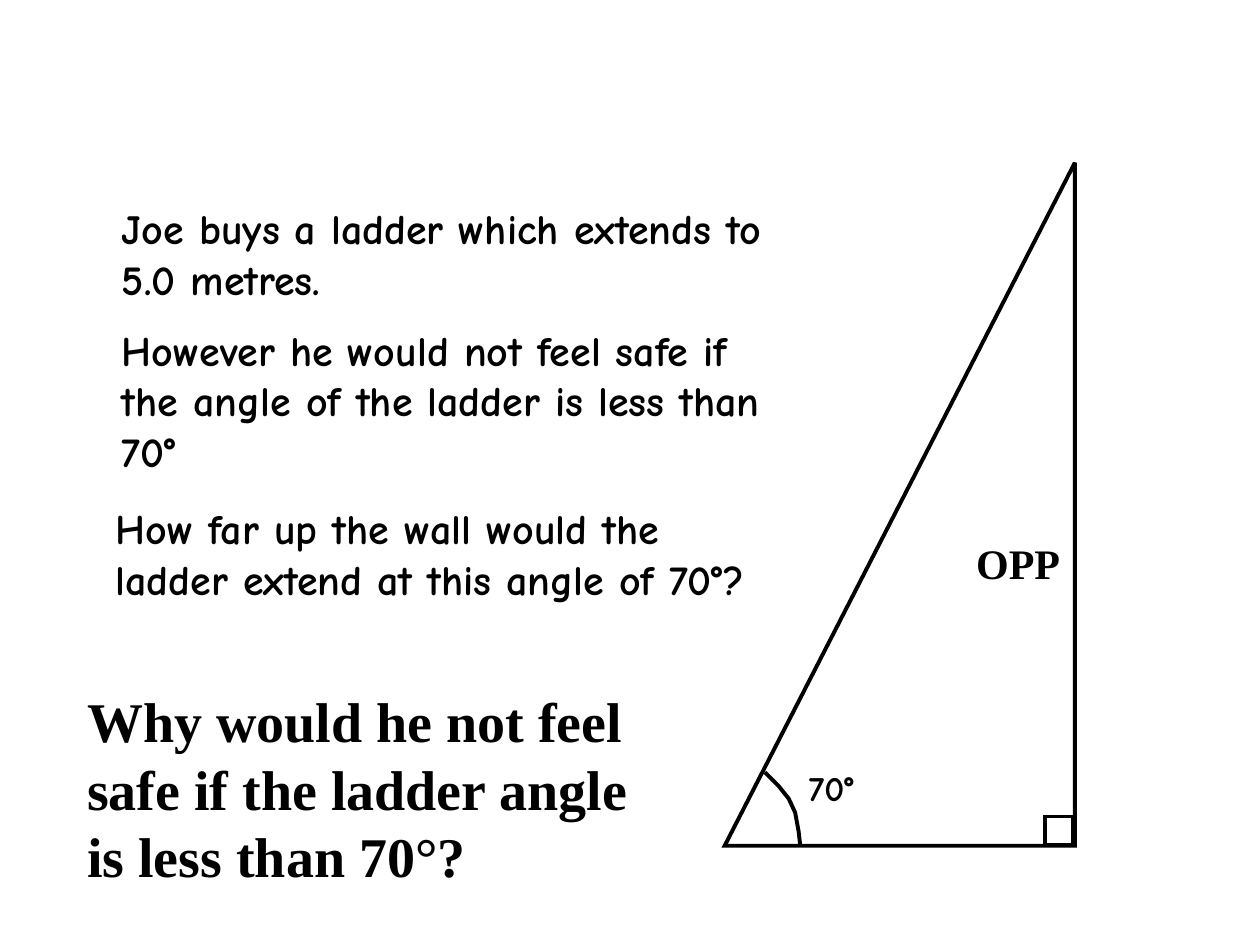
import dataclasses

import lxml.etree
import pptx
import pptx.dml.color
import pptx.enum.shapes
import pptx.enum.text
import pptx.oxml.ns
import pptx.util

Cm, Pt = pptx.util.Cm, pptx.util.Pt


@dataclasses.dataclass(frozen=True)
class Theme:
    ink: pptx.dml.color.RGBColor = pptx.dml.color.RGBColor(0, 0, 0)
    hand: str = "Comic Neue"
    serif: str = "Times New Roman"
    small: int = 20
    body: int = 24
    title: int = 32
    line: float = 2.25


THEME = Theme()


@dataclasses.dataclass(frozen=True)
class Box:
    left: float
    top: float
    width: float
    height: float

    def lengths(self) -> tuple:
        return tuple(Cm(v) for v in dataclasses.astuple(self))


@dataclasses.dataclass(frozen=True)
class Label:
    box: Box
    paragraphs: tuple
    font: str = THEME.hand
    size: int = THEME.body


QUESTION = Label(
    Box(1.5, 13.72, 12.19, 4.37),
    ("Why would he not feel safe if the ladder angle is less than 70°?",),
    THEME.serif,
    THEME.title,
)
LABELS = (
    Label(
        Box(2.21, 3.96, 14.07, 5.89),
        (
            "Joe buys a ladder which extends to 5.0 metres.",
            "However he would not feel safe if the angle of the ladder is less than 70°",
        ),
    ),
    Label(Box(19.43, 10.72, 2.26, 1.27), ("OPP",), THEME.serif),
    Label(Box(16.05, 15.32, 2.26, 1.09), ("70°",), size=THEME.small),
    Label(
        Box(2.08, 10.01, 13.74, 3.33),
        ("How far up the wall would the ladder extend at this angle of 70°?",),
    ),
)
TRIANGLE = Box(14.61, 3.28, 7.06, 13.77)
CORNER = Box(21.06, 16.46, 0.58, 0.58)
ARC = (
    (16.13, 17.02), (16.1, 16.76), (16.03, 16.38), (15.9, 16.1),
    (15.7, 15.85), (15.42, 15.57),
)


def write(tf, label: Label) -> None:
    """Fill a text frame with the paragraphs of a label."""
    frame = {
        "word_wrap": True,
        "auto_size": pptx.enum.text.MSO_AUTO_SIZE.NONE,
        "vertical_anchor": pptx.enum.text.MSO_ANCHOR.TOP,
    }
    for name, value in frame.items():
        setattr(tf, name, value)
    for i, text in enumerate(label.paragraphs):
        p = tf.add_paragraph() if i else tf.paragraphs[0]
        p.alignment = pptx.enum.text.PP_ALIGN.LEFT
        p.space_before = Pt(label.size / 2 if i else 0)
        r = p.add_run()
        r.text = text
        font = {"name": label.font, "size": Pt(label.size), "bold": True}
        for name, value in font.items():
            setattr(r.font, name, value)
        r.font.color.rgb = THEME.ink


def outline(sp) -> None:
    """Give a shape a plain outline without fill or shadow."""
    sp.shadow.inherit = False
    sp.fill.background()
    sp.line.color.rgb = THEME.ink
    sp.line.width = Pt(THEME.line)
    lxml.etree.SubElement(sp.line._get_or_add_ln(), pptx.oxml.ns.qn("a:miter"), lim="800000")


def add_outline(s, kind, box: Box):
    """Draw an outlined preset shape."""
    sp = s.shapes.add_shape(kind, *box.lengths())
    outline(sp)
    return sp


def add_arc(s, points: tuple) -> None:
    """Draw the angle mark through the given points."""
    start, *rest = [(Cm(x), Cm(y)) for x, y in points]
    builder = s.shapes.build_freeform(*start, scale=1.0)
    builder.add_line_segments(rest, close=False)
    outline(builder.convert_to_shape())


def main() -> None:
    """Build the ladder problem slide."""
    prs = pptx.Presentation()
    prs.slide_width, prs.slide_height = Cm(25.4), Cm(19.05)
    s = prs.slides.add_slide(prs.slide_layouts[5])
    title = s.shapes.title
    for name, value in zip(("left", "top", "width", "height"), QUESTION.box.lengths()):
        setattr(title, name, value)
    write(title.text_frame, QUESTION)

    kinds = pptx.enum.shapes.MSO_SHAPE
    triangle = add_outline(s, kinds.RIGHT_TRIANGLE, TRIANGLE)
    triangle._element.spPr.xfrm.set("flipH", "1")
    add_arc(s, ARC)
    add_outline(s, kinds.RECTANGLE, CORNER)
    for label in LABELS:
        write(s.shapes.add_textbox(*label.box.lengths()).text_frame, label)
    prs.save("out.pptx")


if __name__ == "__main__":
    main()
